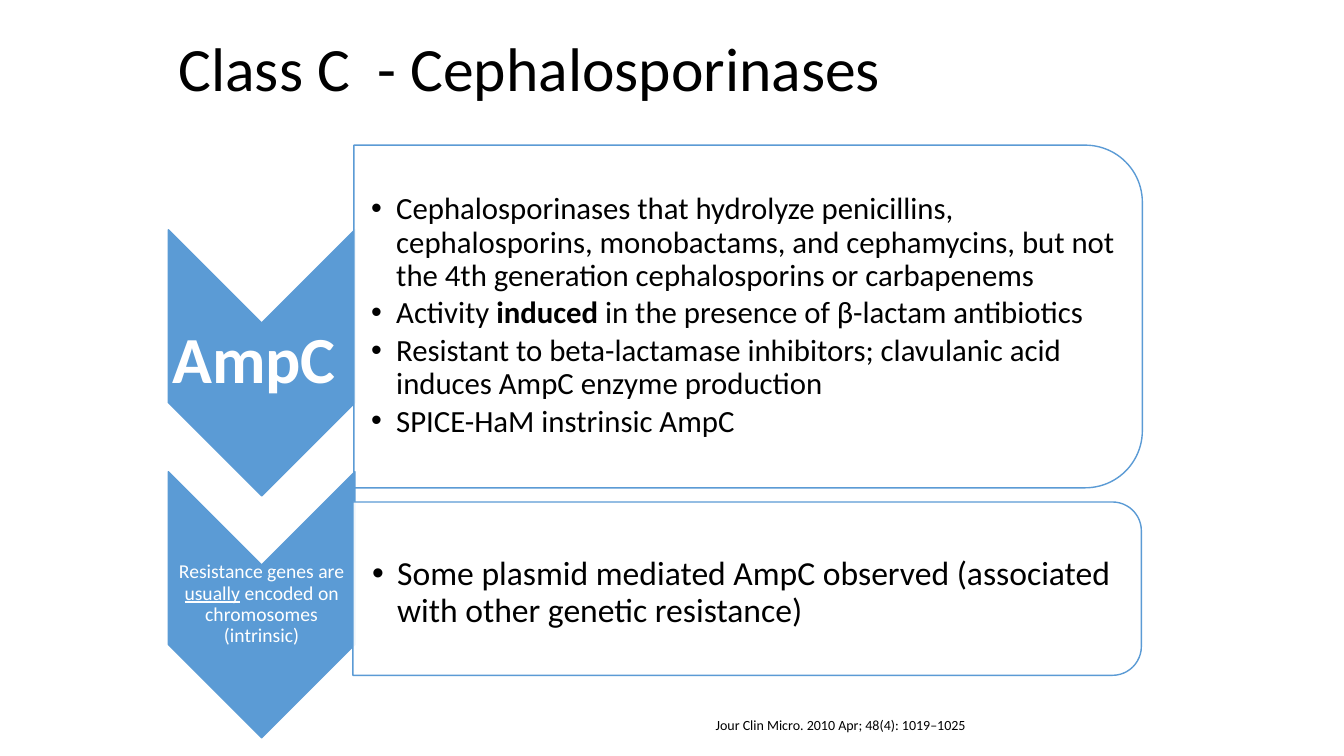
from dataclasses import dataclass

from lxml import etree
from pptx import Presentation
from pptx.dml.color import RGBColor
from pptx.enum.shapes import MSO_SHAPE
from pptx.enum.text import MSO_ANCHOR, MSO_AUTO_SIZE, PP_ALIGN
from pptx.oxml.ns import qn
from pptx.util import Inches, Pt

CHEVRON = MSO_SHAPE.CHEVRON
PANEL = MSO_SHAPE.ROUND_2_SAME_RECTANGLE
MIDDLE, TOP = MSO_ANCHOR.MIDDLE, MSO_ANCHOR.TOP
LEFT, CENTER = PP_ALIGN.LEFT, PP_ALIGN.CENTER
NO_FIT = MSO_AUTO_SIZE.NONE

FONT = "Calibri"
BLACK, WHITE, BLUE = "000000", "FFFFFF", "5B9BD5"
CHEVRON_LEFT, CHEVRON_W, CHEVRON_H = 1.67, 1.85, 2.64
LABEL_OFFSET, LABEL_H = 0.92, 0.79
PANEL_W = 7.82


@dataclass
class Span:
    text: str
    bold: bool = False
    underline: bool = False


@dataclass
class Box:
    left: float
    top: float
    width: float
    height: float


@dataclass
class Row:
    chevron_top: float
    label: list[Span]
    label_size: float
    label_inset: float
    panel: Box
    body: Box
    body_size: float
    body_inset: float
    bullets: list[list[Span]]


ROWS = [
    Row(2.28, [Span("AmpC ", bold=True)], 47, 0.03,
        Box(3.51, 1.44, PANEL_W, 3.4), Box(3.51, 1.6, 7.65, 3.07), 22, 0.17,
        [[Span("Cephalosporinases that hydrolyze penicillins, cephalosporins, "
               "monobactams, and cephamycins, but not the 4th generation "
               "cephalosporins or carbapenems")],
         [Span("Activity "), Span("induced", bold=True),
          Span(" in the presence of β-lactam antibiotics")],
         [Span("Resistant to beta-lactamase inhibitors; clavulanic acid "
               "induces AmpC enzyme production")],
         [Span("SPICE-HaM instrinsic AmpC")]]),
    Row(4.68, [Span("Resistance genes are "), Span("usually", underline=True),
               Span(" encoded on chromosomes (intrinsic)")], 14, 0.01,
        Box(3.5, 4.98, PANEL_W, 1.72), Box(3.5, 5.11, 7.74, 1.55), 24, 0.19,
        [[Span("Some plasmid mediated AmpC observed (associated with other "
               "genetic resistance)")]]),
]


def rgb(value: str) -> RGBColor:
    return RGBColor.from_string(value)


def place(sp, box: Box) -> None:
    sp.left, sp.top = Inches(box.left), Inches(box.top)
    sp.width, sp.height = Inches(box.width), Inches(box.height)


def format_run(r, size: float, color: str) -> None:
    r.font.name = FONT
    r.font.size = Pt(size)
    r.font.color.rgb = rgb(color)


def add_turned(s, kind, box: Box, fill: str, opacity: int = 100) -> None:
    shift = (box.width - box.height) / 2
    sp = s.shapes.add_shape(kind, Inches(box.left + shift), Inches(box.top - shift),
                            Inches(box.height), Inches(box.width))
    sp.rotation = 90
    sp.shadow.inherit = False
    sp.fill.solid()
    sp.fill.fore_color.rgb = rgb(fill)
    sp.line.color.rgb = rgb(BLUE)
    sp.line.width = Pt(1)
    if opacity < 100:
        color = sp._element.spPr.find(qn("a:solidFill"))[0]
        etree.SubElement(color, qn("a:alpha"), val=str(opacity * 1000))


def add_bullet(p) -> None:
    pPr = p._p.get_or_add_pPr()
    pPr.set("marL", str(Inches(0.25)))
    pPr.set("indent", str(Inches(-0.25)))
    etree.SubElement(pPr, qn("a:buFont"), typeface="Arial")
    etree.SubElement(pPr, qn("a:buChar"), char="•")


def add_text(s, box: Box, paragraphs: list[list[Span]], size: float, color: str,
             align, left_inset: float, inset: float, bullets: bool = False) -> None:
    sp = s.shapes.add_textbox(0, 0, 0, 0)
    place(sp, box)
    tf = sp.text_frame
    tf.word_wrap = True
    tf.vertical_anchor = MIDDLE
    tf.margin_left = Inches(left_inset)
    tf.margin_top = tf.margin_right = tf.margin_bottom = Inches(inset)
    for i, spans in enumerate(paragraphs):
        p = tf.add_paragraph() if i else tf.paragraphs[0]
        p.alignment = align
        p.line_spacing = 0.9
        p.space_after = Pt(3)
        if bullets:
            add_bullet(p)
        for span in spans:
            r = p.add_run()
            r.text = span.text
            format_run(r, size, color)
            r.font.bold = span.bold
            r.font.underline = span.underline


def add_row(s, row: Row) -> None:
    add_turned(s, CHEVRON, Box(CHEVRON_LEFT, row.chevron_top, CHEVRON_W, CHEVRON_H), BLUE)
    label_box = Box(CHEVRON_LEFT, row.chevron_top + LABEL_OFFSET, CHEVRON_W, LABEL_H)
    add_text(s, label_box, [row.label], row.label_size, WHITE, CENTER,
             row.label_inset, row.label_inset)
    add_turned(s, PANEL, row.panel, WHITE, 90)
    add_text(s, row.body, row.bullets, row.body_size, BLACK, LEFT,
             row.body_inset, 0.02, bullets=True)


def add_title(s) -> None:
    sp = s.shapes.title
    place(sp, Box(1.67, 0.32, 9.42, 0.77))
    tf = sp.text_frame
    tf.text = "Class C  - Cephalosporinases"
    tf.auto_size = NO_FIT
    tf.vertical_anchor = MIDDLE
    p = tf.paragraphs[0]
    p.alignment = LEFT
    p.line_spacing = 0.9
    format_run(p.runs[0], 44, BLACK)


def add_citation(s) -> None:
    sp = s.shapes.add_textbox(Inches(7), Inches(7.06), Inches(4.67), Inches(0.27))
    tf = sp.text_frame
    tf.text = "Jour Clin Micro. 2010 Apr; 48(4): 1019–1025"
    tf.word_wrap = True
    tf.vertical_anchor = TOP
    format_run(tf.paragraphs[0].runs[0], 10, BLACK)


def main() -> None:
    prs = Presentation()
    prs.slide_width, prs.slide_height = Inches(13.33), Inches(7.5)
    s = prs.slides.add_slide(prs.slide_layouts[5])
    add_title(s)
    for row in ROWS:
        add_row(s, row)
    add_citation(s)
    prs.save("out.pptx")


if __name__ == "__main__":
    main()
